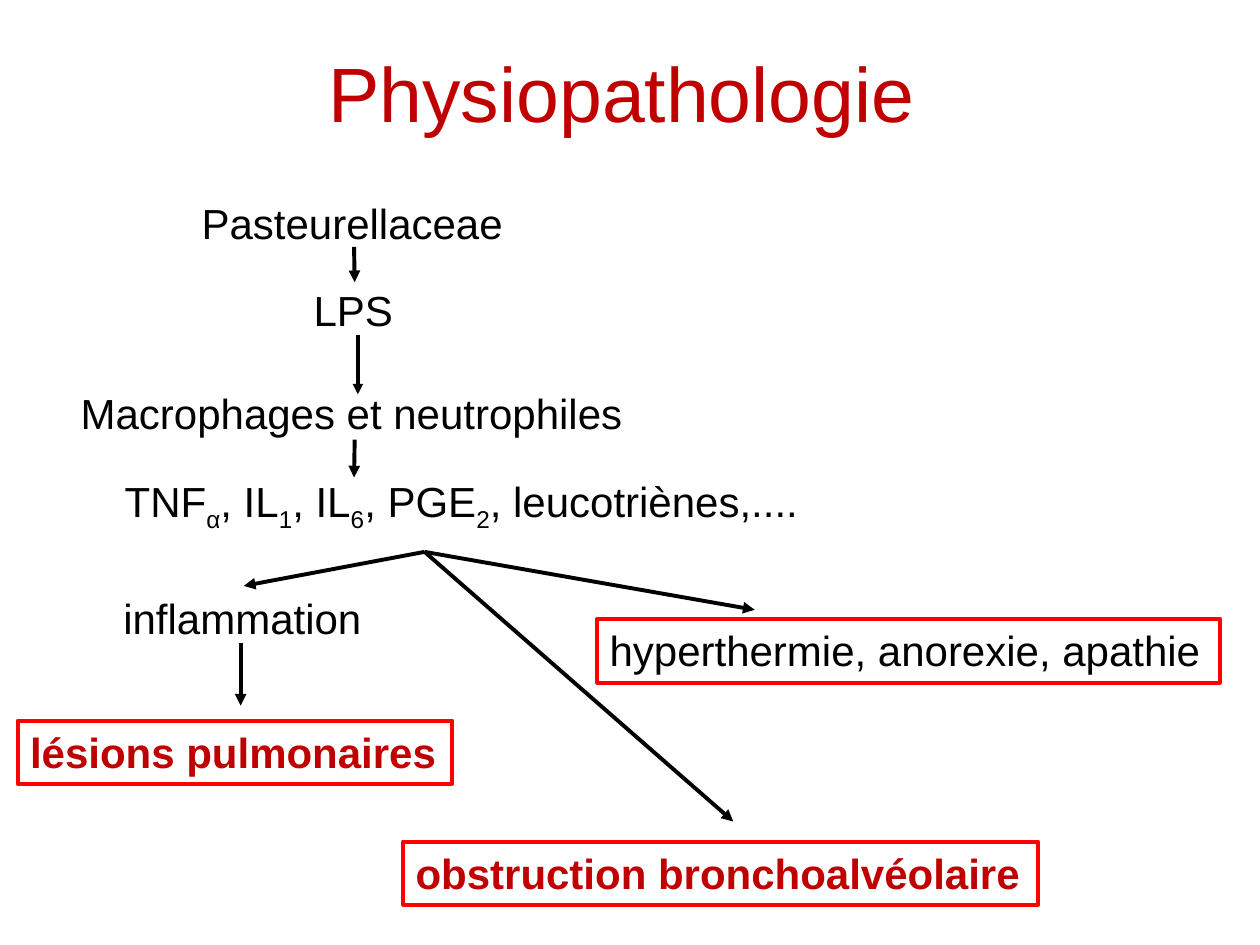
from itertools import cycle

from lxml import etree
from pptx import Presentation
from pptx import util as u
from pptx.dml import color as dye
from pptx.enum import shapes, text
from pptx.oxml.ns import qn

HUES = {"ink": "000000", "deep": "C00000", "edge": "FF0000"}
COLS, ROWS = 100, 75
CELL = u.Inches(0.1)
TOP, BASE = 0, 2


def tint(color, name):
    color.rgb = dye.RGBColor.from_string(HUES[name])


def span(*cells):
    return [round(c * CELL) for c in cells]


def shift(box, x, y):
    return box[0] + x, box[1] + y


def write(shape, parts, points=24, hue="ink", bold=False, pad=(1, 0.5),
          anchor="TOP", wrap=False):
    body = shape.text_frame
    body.word_wrap = wrap
    body.auto_size = (text.MSO_AUTO_SIZE.NONE if wrap
                      else text.MSO_AUTO_SIZE.SHAPE_TO_FIT_TEXT)
    body.vertical_anchor = getattr(text.MSO_ANCHOR, anchor)
    side, edge = span(*pad)
    body.margin_left = body.margin_right = side
    body.margin_top = body.margin_bottom = edge
    para = body.paragraphs[0]
    para.alignment = text.PP_ALIGN.LEFT
    font = para.font
    font.name, font.size, font.bold = "Arial", u.Pt(points), bold
    tint(font.color, hue)
    for part, base in zip(parts, cycle((None, "-25000"))):
        run = para.add_run()
        run.text = part
        if base:
            run._r.get_or_add_rPr().set("baseline", base)
    return para


def label(slide, at, size, parts, **style):
    shape = slide.shapes.add_textbox(*span(*at, *size))
    return shape, write(shape, parts, **style)


def frame(slide, at, size, words, **style):
    shape = slide.shapes.add_shape(shapes.MSO_SHAPE.RECTANGLE, *span(*at, *size))
    shape.shadow.inherit = False
    shape.fill.background()
    shape.line.width = u.Pt(2.25)
    tint(shape.line.color, "edge")
    write(shape, [words], **style)


def arrow(slide, start, end, width=2.25, tail=None, head=None):
    link = slide.shapes.add_connector(
        shapes.MSO_CONNECTOR.STRAIGHT, *span(*start, *end))
    if tail:
        link.begin_connect(tail, BASE)
    if head:
        link.end_connect(head, TOP)
    link.line.width = u.Pt(width)
    tint(link.line.color, "ink")
    props = link._element.spPr
    etree.SubElement(props.find(qn("a:ln")), qn("a:tailEnd"), type="triangle")
    etree.SubElement(props, qn("a:effectLst"))


def title(slide, box):
    para = label(slide, box[:2], box[2:], ["Physiopathologie"], points=44,
                 hue="deep", anchor="MIDDLE", wrap=True)[1]
    para.alignment = text.PP_ALIGN.CENTER
    para.line_spacing = 0.8


def cascade(slide, box):
    steps = [
        (9.6, 0, 25.4, ["Pasteurellaceae"]),
        (18.5, 7.1, 7.7, ["LPS"]),
        (0, 15.3, 44.7, ["Macrophages et neutrophiles"]),
        (3.5, 22.6, 56.4, ["TNF", "α", ", IL", "1", ", IL", "6", ", PGE", "2",
                           ", leucotriènes,...."]),
    ]
    made = [label(slide, shift(box, x, y), (w, 4.3), parts, pad=(0.6, 0.1),
                  anchor="MIDDLE") for x, y, w, parts in steps]
    made[0][1].line_spacing = 1.1
    germ, toxin, cells = [shape for shape, _ in made[:3]]
    mid = 22.3
    arrow(slide, shift(box, mid, 4.3), shift(box, mid, 7.1), tail=germ, head=toxin)
    arrow(slide, shift(box, mid + 0.3, 11.3), shift(box, mid + 0.3, 16), width=2)
    arrow(slide, shift(box, mid, 19.6), shift(box, mid, 22.6), tail=cells)


def effects(slide, box):
    fork = shift(box, 32.3, 0)
    swell = label(slide, shift(box, 7.4, 2.7), (21.1, 5.1), ["inflammation"])[0]
    arrow(slide, fork, shift(box, 18, 2.7), head=swell)
    arrow(slide, fork, shift(box, 58.5, 4.6))
    arrow(slide, fork, shift(box, 56.8, 21.4))
    arrow(slide, shift(box, 17.7, 7.2), shift(box, 17.7, 12.2))
    frame(slide, shift(box, 46, 5.3), (49.4, 5.1), "hyperthermie, anorexie, apathie")
    for x, y, w, words in [(0, 13.4, 34.5, "lésions pulmonaires"),
                           (30.6, 23, 50.4, "obstruction bronchoalvéolaire")]:
        frame(slide, shift(box, x, y), (w, 5), words, hue="deep", bold=True)


def main():
    deck = Presentation()
    deck.slide_width, deck.slide_height = span(COLS, ROWS)
    slide = deck.slides.add_slide(deck.slide_layouts[6])
    title(slide, (4.5, 2.2, 89.7, 11.6))
    cascade(slide, (5.8, 15.3))
    effects(slide, (1.4, 43.8))
    deck.save("out.pptx")


if __name__ == "__main__":
    main()
